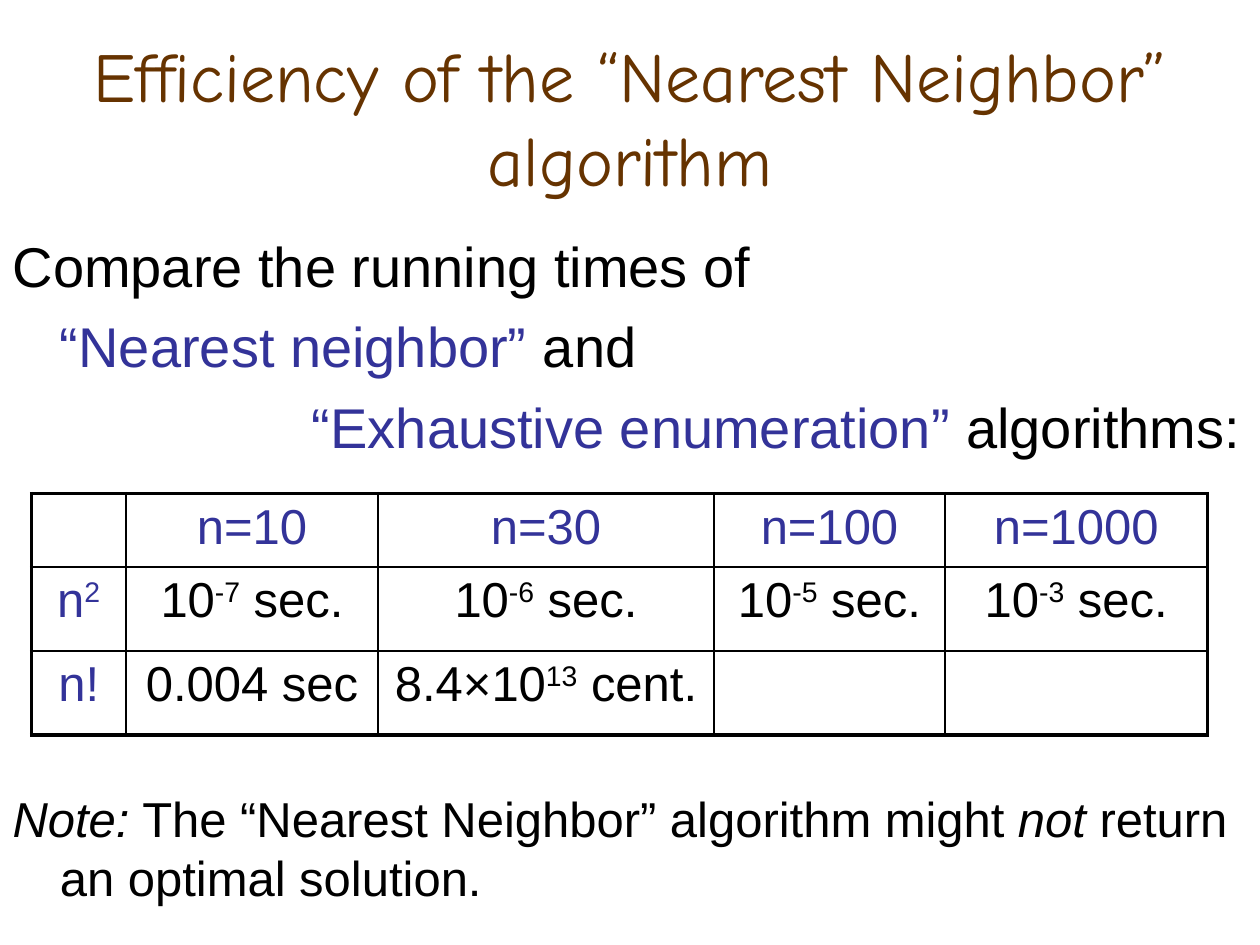
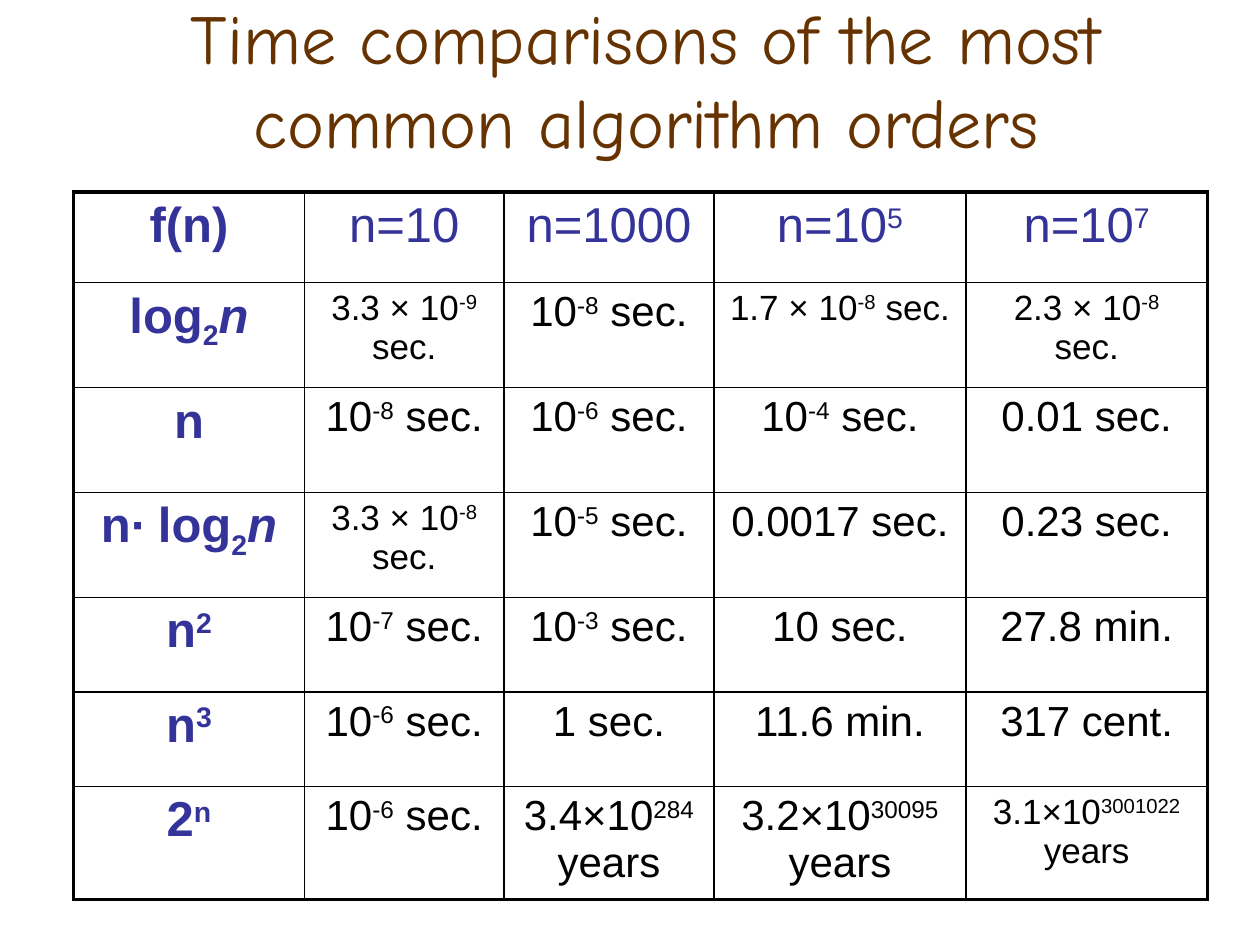
import lxml.etree
import pptx
import pptx.dml.color
import pptx.enum.text
import pptx.oxml.ns
import pptx.util

PX = 7620  # EMU; 120 px to the inch
BROWN, BLUE, BLACK = "663300", "333399", "000000"
BODY_FONT, TITLE_FONT = "Arial", "Comic Neue"
OUTER_LINE, INNER_LINE = pptx.util.Pt(2.25), pptx.util.Pt(1)
CENTER = pptx.enum.text.PP_ALIGN.CENTER


def write_text(paragraph, markup, size, color, font=BODY_FONT, bold=False):
    """Add runs split at "|"; a leading ^ _ / # makes a run super, sub, italic or blue."""
    for piece in markup.split("|"):
        mark = piece[0] if piece[0] in "^_/#" else ""
        run = paragraph.add_run()
        run.text = piece[len(mark):]
        run.font.name = font
        run.font.size = pptx.util.Pt(size)
        run.font.bold = bold
        run.font.italic = mark == "/"
        run_color = BLUE if mark == "#" else color
        run.font.color.rgb = pptx.dml.color.RGBColor.from_string(run_color)
        if mark in ("^", "_"):
            run.font._element.set("baseline", "30000" if mark == "^" else "-25000")


def add_time_table(slide, left, top, widths, heights, rows, body_size, small_cells=(), bold_labels=False):
    """Add a table with blue labels in the first row and column and a heavy frame."""
    frame = slide.shapes.add_table(len(heights), len(widths), left * PX, top * PX,
                                   sum(widths) * PX, sum(heights) * PX)
    table = frame.table
    table.first_row = table.horz_banding = False
    for column, width in zip(table.columns, widths):
        column.width = width * PX
    for row, height in zip(table.rows, heights):
        row.height = height * PX

    last_row, last_column = len(heights) - 1, len(widths) - 1
    for r, row in enumerate(rows):
        for c, markup in enumerate(row):
            cell = table.cell(r, c)
            properties = cell._tc.get_or_add_tcPr()
            on_frame = {"lnL": c == 0, "lnR": c == last_column, "lnT": r == 0, "lnB": r == last_row}
            for side, is_outer in on_frame.items():
                line = lxml.etree.SubElement(properties, pptx.oxml.ns.qn("a:" + side),
                                             w=str(OUTER_LINE if is_outer else INNER_LINE))
                fill = lxml.etree.SubElement(line, pptx.oxml.ns.qn("a:solidFill"))
                lxml.etree.SubElement(fill, pptx.oxml.ns.qn("a:srgbClr"), val=BLACK)
            cell.fill.background()
            if not markup:
                continue
            is_label = r == 0 or c == 0
            size = 28 if is_label else 20 if (r, c) in small_cells else body_size
            paragraph = cell.text_frame.paragraphs[0]
            paragraph.alignment = CENTER
            write_text(paragraph, markup, size, BLUE if is_label else BLACK,
                       bold=bold_labels and c == 0)


presentation = pptx.Presentation()
presentation.slide_width = 1200 * PX
presentation.slide_height = 900 * PX
content_layout, title_layout = presentation.slide_layouts[1], presentation.slide_layouts[5]

# Titles
titles = [
    (content_layout, "Efficiency of the “Nearest Neighbor” algorithm", (60, 36, 1080, 150)),
    (title_layout, "Time comparisons of the most common algorithm orders", (90, 30, 1050, 90)),
]
slides = []
for layout, text, box in titles:
    slide = presentation.slides.add_slide(layout)
    title = slide.shapes.title
    title.left, title.top, title.width, title.height = [length * PX for length in box]
    title.text_frame.auto_size = pptx.enum.text.MSO_AUTO_SIZE.NONE
    title.text_frame.vertical_anchor = pptx.enum.text.MSO_ANCHOR.MIDDLE
    paragraph = title.text_frame.paragraphs[0]
    paragraph.alignment = CENTER
    write_text(paragraph, text, 40, BROWN, TITLE_FONT)
    slides.append(slide)
efficiency_slide, orders_slide = slides

# Slide 1: text around the table
body = efficiency_slide.placeholders[1]
body.left, body.top, body.width, body.height = 0, 210 * PX, 1200 * PX, 690 * PX
body.text_frame.auto_size = pptx.enum.text.MSO_AUTO_SIZE.NONE
body.text_frame.margin_top = 10 * PX
body_lines = [  # text, size, space before in points, left margin, first-line indent
    ("Compare the running times of", 32, 0, 45, -45),
    ("#“Nearest neighbor”| and", 32, 7.8, 45, 0),
    ("#“Exhaustive enumeration”| algorithms:", 32, 7.8, 285, 0),
    ("/Note:| The “Nearest Neighbor” algorithm might |/not| return an optimal solution.",
     28, 188, 45, -45),
]
for index, (markup, size, space, margin, indent) in enumerate(body_lines):
    paragraph = body.text_frame.add_paragraph() if index else body.text_frame.paragraphs[0]
    paragraph.space_before = pptx.util.Pt(space)
    properties = paragraph._p.get_or_add_pPr()
    properties.set("marL", str(margin * PX))
    properties.set("indent", str(indent * PX))
    lxml.etree.SubElement(properties, pptx.oxml.ns.qn("a:buNone"))
    write_text(paragraph, markup, size, BLACK)

running_times = [
    ["", "n=10", "n=30", "n=100", "n=1000"],
    ["n|^2", "10|^-7| sec.", "10|^-6| sec.", "10|^-5| sec.", "10|^-3| sec."],
    ["n!", "0.004 sec", "8.4×10|^13| cent.", "", ""],
]
add_time_table(efficiency_slide, 30, 470, [90, 240, 320, 220, 250], [70, 80, 80],
               running_times, 28)

# Slide 2: table of orders
order_times = [
    ["f(n)", "n=10", "n=1000", "n=10|^5", "n=10|^7"],
    ["log|_2|/n", "3.3 × 10|^-9| sec.", "10|^-8| sec.", "1.7 × 10|^-8| sec.", "2.3 × 10|^-8| sec."],
    ["n", "10|^-8| sec.", "10|^-6| sec.", "10|^-4| sec.", "0.01 sec."],
    ["n∙ log|_2|/n", "3.3 × 10|^-8| sec.", "10|^-5| sec.", "0.0017 sec.", "0.23 sec."],
    ["n|^2", "10|^-7| sec.", "10|^-3| sec.", "10 sec.", "27.8 min."],
    ["n|^3", "10|^-6| sec.", "1 sec.", "11.6 min.", "317 cent."],
    ["2|^n", "10|^-6| sec.", "3.4×10|^284| years", "3.2×10|^30095| years", "3.1×10|^3001022| years"],
]
add_time_table(orders_slide, 70, 183, [220, 190, 200, 240, 230], [86, 100, 100, 100, 90, 90, 108],
               order_times, 24, small_cells={(1, 1), (1, 3), (1, 4), (3, 1), (6, 4)}, bold_labels=True)

presentation.save("out.pptx")
